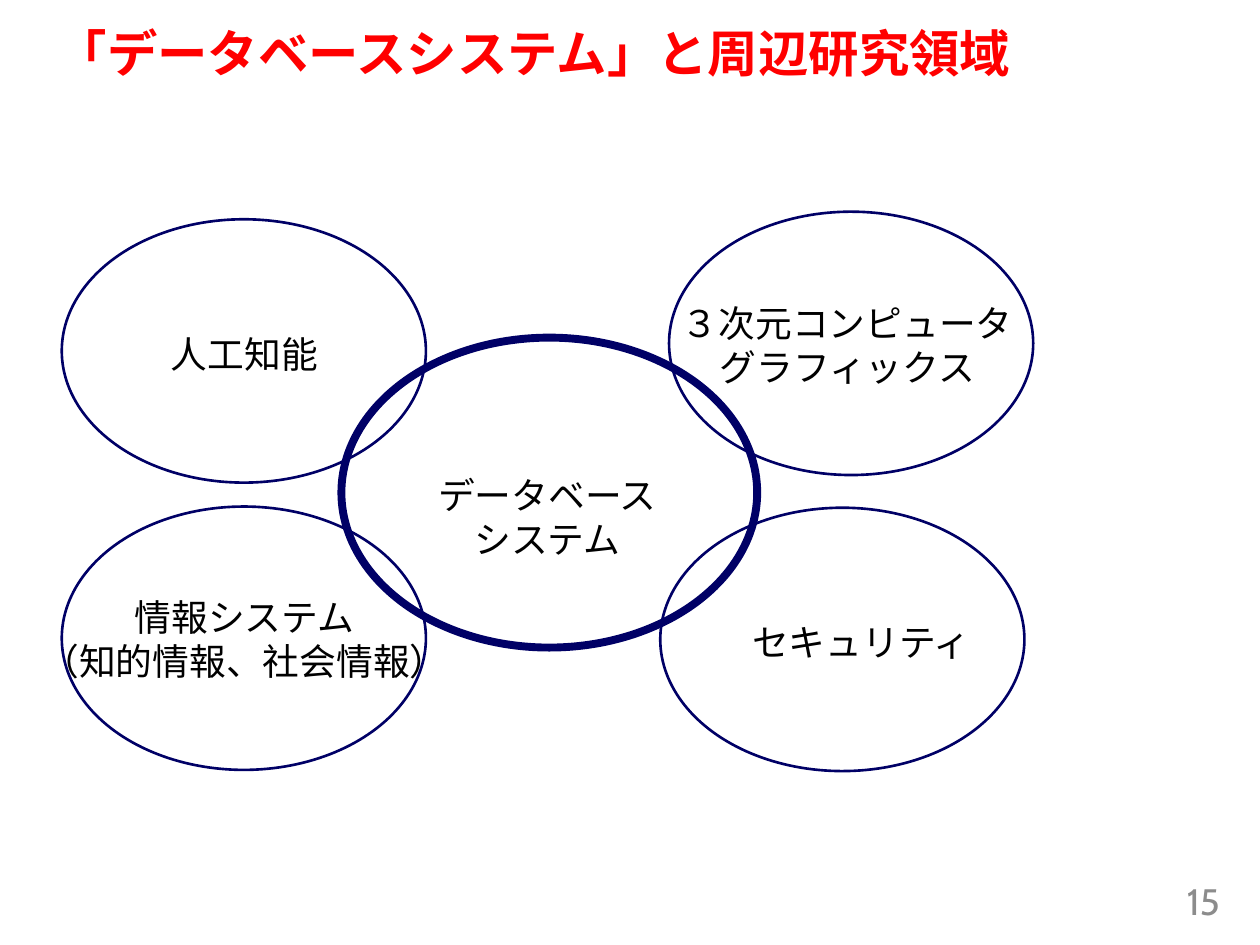
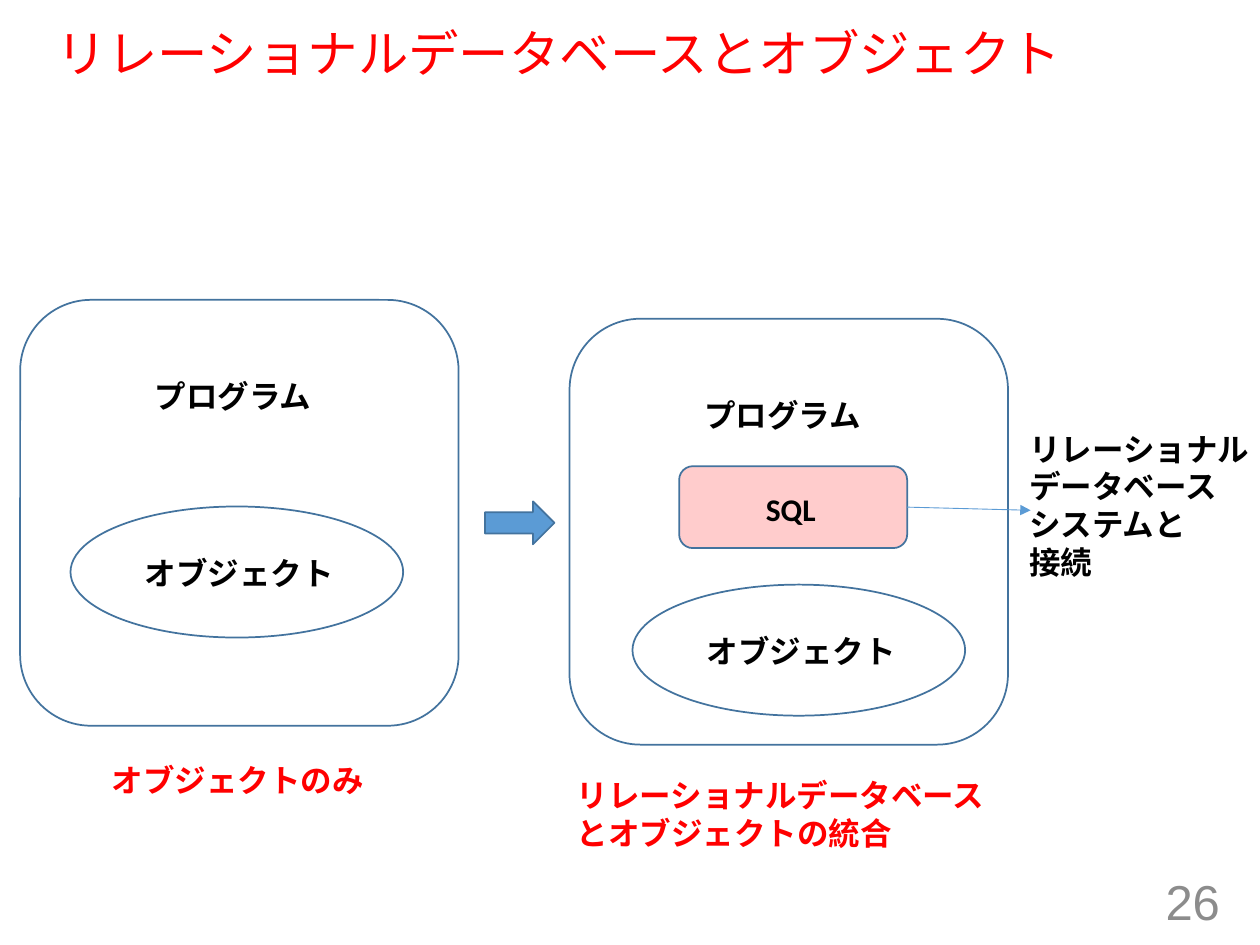
"""Build two slides on database systems and their neighbouring fields."""
from lxml import etree
from pptx import Presentation, util as u
from pptx.dml.color import RGBColor
from pptx.enum import shapes, text
from pptx.oxml.ns import qn

RED, BLACK, GREY = "FF0000", "000000", "8C8C8C"
NAVY, STEEL, BLUE = "000066", "43739E", "5B9BD5"
KIND, ALIGN = shapes.MSO_SHAPE, text.PP_ALIGN


def write(frame, words, size, font, color=BLACK, bold=False, align=ALIGN.LEFT):
    frame.text = words
    for para in frame.paragraphs:
        para.alignment = align
        for run in para.runs:
            run.font.size, run.font.name, run.font.bold = u.Pt(size), font, bold
            run.font.color.rgb = RGBColor.from_string(color)


def draw(slide, kind, box, line, width, fill=None):
    shape = slide.shapes.add_shape(kind, *map(u.Inches, box))
    shape.shadow.inherit = False
    shape.line.color.rgb = RGBColor.from_string(line)
    shape.line.width = u.Pt(width)
    if fill:
        shape.fill.solid()
        shape.fill.fore_color.rgb = RGBColor.from_string(fill)
    else:
        shape.fill.background()
    return shape


deck = Presentation()
deck.slide_width, deck.slide_height = u.Inches(10), u.Inches(7.5)

heads = [
    ("「データベースシステム」と周辺研究領域", True, "15", 21, "Cabin"),
    ("リレーショナルデータベースとオブジェクト", False, "26", 28, "Arial"),
]
for head, bold, num, size, font in heads:
    slide = deck.slides.add_slide(deck.slide_layouts[5])
    title = slide.shapes.title
    title.left, title.top = u.Inches(0.35), u.Inches(0.19)
    title.width, title.height = u.Inches(9.25), u.Inches(0.51)
    write(title.text_frame, head, 28.8, "Arial", RED, bold)
    title.text_frame.vertical_anchor = text.MSO_ANCHOR.MIDDLE
    title.text_frame.paragraphs[0].line_spacing = 0.9
    page = slide.shapes.add_textbox(*map(u.Inches, (7.53, 6.95, 2.25, 0.4)))
    page.text_frame.word_wrap = True
    page.text_frame.vertical_anchor = text.MSO_ANCHOR.MIDDLE
    write(page.text_frame, num, size, font, GREY, align=ALIGN.RIGHT)
fields, merge = deck.slides

draw(fields, KIND.OVAL, (2.71, 2.68, 3.3, 2.46), NAVY, 4.5)
for left, top in [(0.49, 1.74), (0.49, 4.02), (5.24, 4.03), (5.31, 1.68)]:
    draw(fields, KIND.OVAL, (left, top, 2.89, 2.09), NAVY, 1.5)

for left, top in [(0.16, 2.38), (4.52, 2.53)]:
    draw(merge, KIND.ROUNDED_RECTANGLE, (left, top, 3.48, 3.38), STEEL, 1)
for left, top in [(0.56, 4.02), (5.02, 4.64)]:
    draw(merge, KIND.OVAL, (left, top, 2.64, 1.04), STEEL, 1)
draw(merge, KIND.RIGHT_ARROW, (3.85, 3.98, 0.55, 0.34), STEEL, 1, BLUE)
query = draw(merge, KIND.ROUNDED_RECTANGLE, (5.39, 3.7, 1.81, 0.65), STEEL, 1, RED)
tint = query._element.spPr.find(qn("a:solidFill")).find(qn("a:srgbClr"))
etree.SubElement(tint, qn("a:alpha"), val="20000")

link = merge.shapes.add_connector(
    shapes.MSO_CONNECTOR.STRAIGHT, *map(u.Inches, (7.2, 4.03, 8.18, 4.05)))
link.begin_connect(query, 3)
link.line.color.rgb = RGBColor.from_string(BLUE)
link.line.width = u.Pt(0.5)
props = link._element.spPr
etree.SubElement(props.find(qn("a:ln")), qn("a:tailEnd"), type="triangle")
etree.SubElement(props, qn("a:effectLst"))

areas = [
    ("データベース\nシステム", (3.36, 3.7, 1.97, 0.81)),
    ("人工知能", (1.25, 2.58, 1.38, 0.45)),
    ("情報システム\n（知的情報、社会情報）", (0.22, 4.67, 3.44, 0.81)),
    ("３次元コンピュータ\nグラフィックス", (5.3, 2.34, 2.85, 0.81)),
    ("セキュリティ", (5.85, 4.87, 1.97, 0.45)),
]
parts = [
    ("プログラム", (1.13, 2.94, 1.46, 0.4), BLACK),
    ("オブジェクト", (1.05, 4.35, 1.72, 0.4), BLACK),
    ("オブジェクトのみ", (0.79, 5.99, 2.22, 0.4), RED),
    ("プログラム", (5.49, 3.09, 1.46, 0.4), BLACK),
    ("SQL", (5.98, 3.84, 0.6, 0.4), BLACK),
    ("オブジェクト", (5.51, 4.97, 1.72, 0.4), BLACK),
    ("リレーショナルデータベース\nとオブジェクトの統合", (4.48, 6.11, 3.48, 0.71), RED),
    ("リレーショナル\nデータベース\nシステムと\n接続", (8.07, 3.36, 1.97, 1.31), BLACK),
]
labels = [(fields, words, box, (21, "Cabin", BLACK, False, ALIGN.CENTER))
          for words, box in areas]
labels += [(merge, words, box, (18, "Calibri", color, True))
           for words, box, color in parts]
for slide, words, box, style in labels:
    frame = slide.shapes.add_textbox(*map(u.Inches, box)).text_frame
    frame.word_wrap = False
    frame.auto_size = text.MSO_AUTO_SIZE.SHAPE_TO_FIT_TEXT
    write(frame, words, *style)

deck.save("out.pptx")
